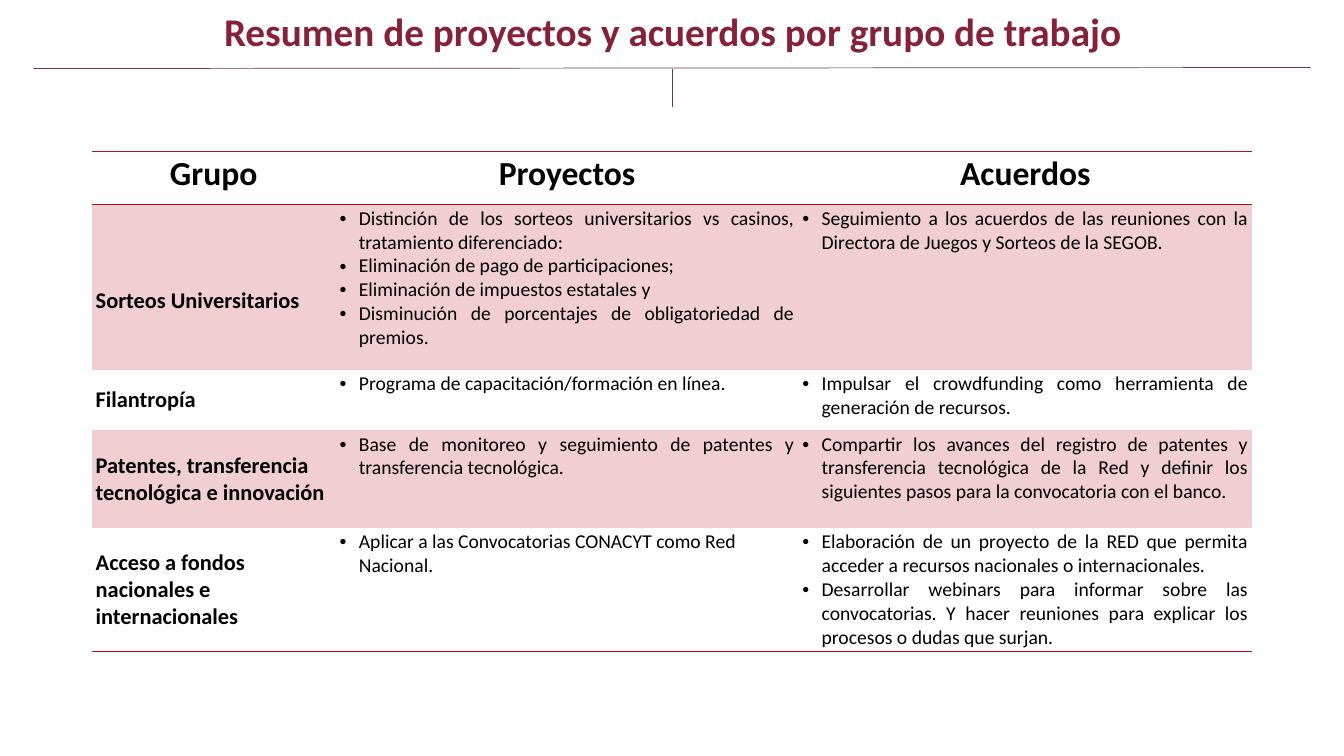
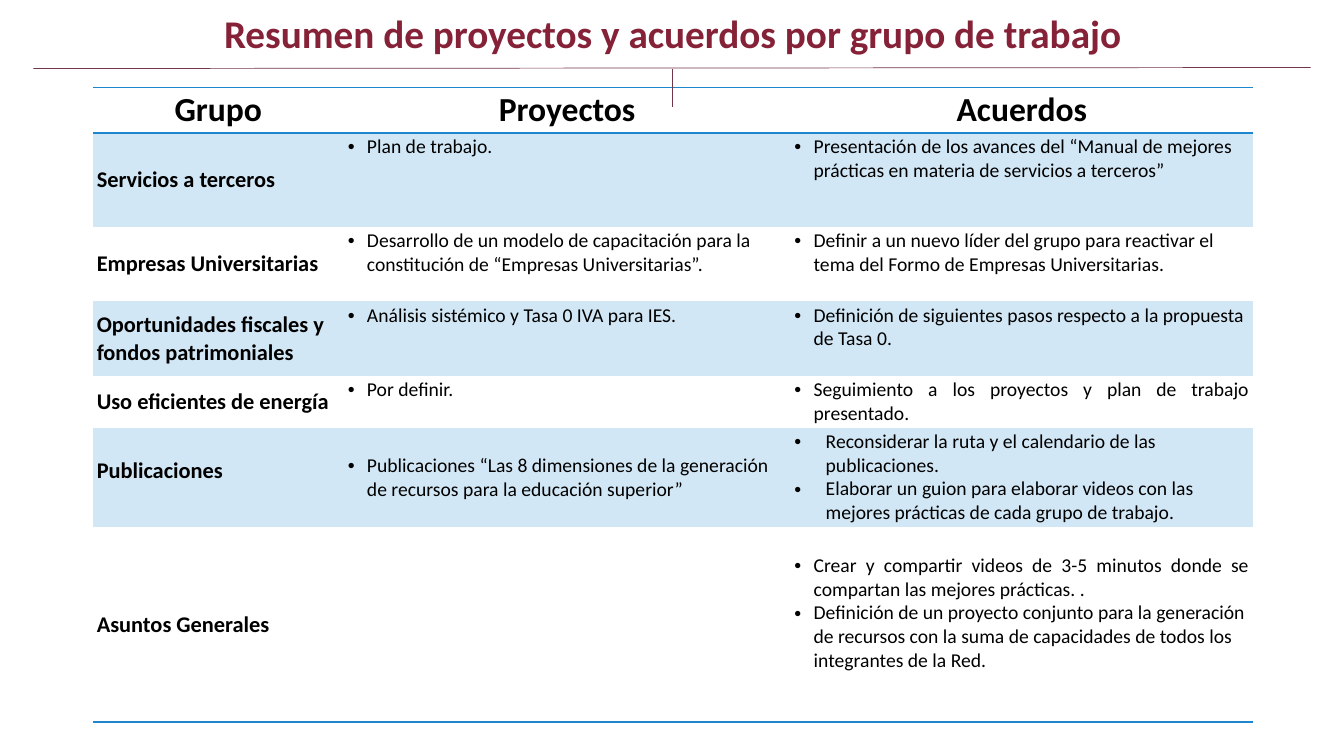
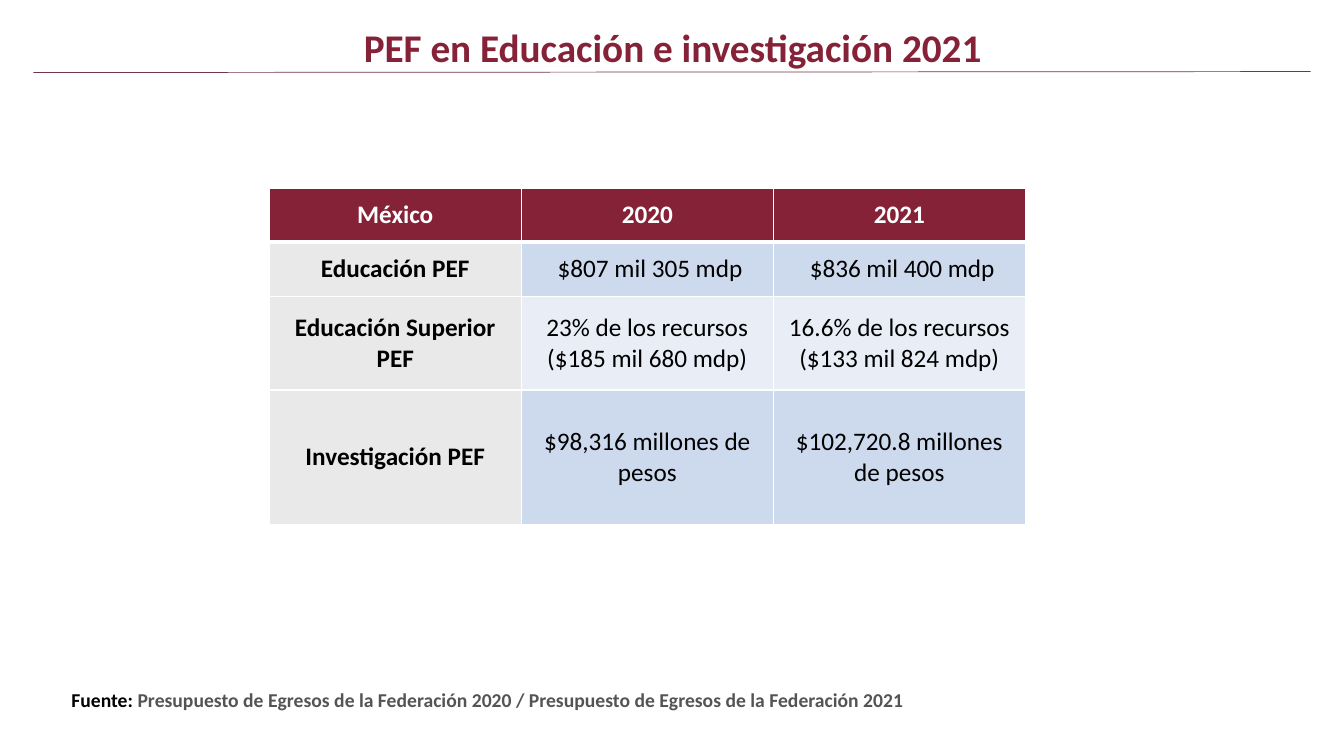
"""Build three slides that summarise working-group projects and the education budget."""
from lxml import etree
from pptx import Presentation
from pptx.dml.color import RGBColor
from pptx.enum import shapes, text
from pptx.oxml.ns import qn
from pptx.util import Inches, Pt

THEME = dict(
    font="Calibri", wine="852238", rule="713648", black="000000", white="FFFFFF", gray="545454",
    red="B50B1B", pink="F0CED1", blue="1D86CD", sky="D2E7F5",
    label="E9E9E9", band=("CDD9ED", "E8EDF6"),
    title=28, header=24, group=16, detail=14, figure=18,
    plain_table="{2D5ABB26-0587-4C30-8999-92F81FD0307C}",
)
CENTER = text.PP_ALIGN.CENTER
TOP, MIDDLE = text.MSO_ANCHOR.TOP, text.MSO_ANCHOR.MIDDLE
LEFT = (text.PP_ALIGN.LEFT, 0.19)
JUST = (text.PP_ALIGN.JUSTIFY, 0.19)
WIDE = (text.PP_ALIGN.LEFT, 0.31)


def write(paragraph, words, size, color="black", bold=False):
    run = paragraph.add_run()
    run.text = words
    for key, value in dict(name=THEME["font"], size=Pt(THEME[size]), bold=bold).items():
        setattr(run.font, key, value)
    run.font.color.rgb = RGBColor.from_string(THEME[color])


def add_borders(cell, color, widths):
    properties = cell._tc.get_or_add_tcPr()
    for side, width in widths.items():
        line = etree.SubElement(properties, qn(f"a:ln{side}"), w=str(Pt(width)))
        fill = etree.SubElement(line, qn("a:solidFill"))
        etree.SubElement(fill, qn("a:srgbClr"), val=THEME[color])


deck = Presentation()
deck.slide_width, deck.slide_height = Inches(13.33), Inches(7.5)

boards = [
    dict(
        line="red", band="pink", at=(0.91, 1.5), widths=(2.42, 4.59, 4.5), header=0.53,
        rows=[
            (1.64, "Sorteos Universitarios", MIDDLE, (0.27, 0, 0),
             [(JUST, "Distinción de los sorteos universitarios vs casinos, tratamiento diferenciado:"),
              (JUST, "Eliminación de pago de participaciones;"),
              (JUST, "Eliminación de impuestos estatales y"),
              (JUST, "Disminución de porcentajes de obligatoriedad de premios.")],
             [(JUST, "Seguimiento a los acuerdos de las reuniones con la Directora de Juegos y "
                     "Sorteos de la SEGOB.")]),
            (0.6, "Filantropía", MIDDLE, (0, 0, 0),
             [(LEFT, "Programa de capacitación/formación en línea.")],
             [(JUST, "Impulsar el crowdfunding como herramienta de generación de recursos.")]),
            (0.97, "Patentes, transferencia tecnológica e innovación", MIDDLE, (0, 0, 0),
             [(JUST, "Base de monitoreo y seguimiento de patentes y transferencia tecnológica.")],
             [(JUST, "Compartir los avances del registro de patentes y transferencia tecnológica "
                     "de la Red y definir los siguientes pasos para la convocatoria con el banco.")]),
            (1.22, "Acceso a fondos nacionales e internacionales", MIDDLE, (0, 0, 0),
             [(LEFT, "Aplicar a las Convocatorias CONACYT como Red Nacional.")],
             [(JUST, "Elaboración de un proyecto de la RED que permita acceder a recursos "
                     "nacionales o internacionales."),
              (JUST, "Desarrollar webinars para informar sobre las convocatorias. Y hacer "
                     "reuniones para explicar los procesos o dudas que surjan.")]),
        ],
    ),
    dict(
        line="blue", band="sky", at=(0.92, 0.87), widths=(2.49, 4.43, 4.59), header=0.45,
        rows=[
            (0.93, "Servicios a terceros", MIDDLE, (0, 0, 0),
             [(LEFT, "Plan de trabajo.")],
             [(LEFT, "Presentación de los avances del “Manual de mejores prácticas en materia "
                     "de servicios a terceros”")]),
            (0.74, "Empresas Universitarias", MIDDLE, (0, 0, 0),
             [(LEFT, "Desarrollo de un modelo de capacitación para la constitución de "
                     "“Empresas Universitarias”.")],
             [(LEFT, "Definir a un nuevo líder del grupo para reactivar el tema del Formo de "
                     "Empresas Universitarias.")]),
            (0.74, "Oportunidades fiscales y fondos patrimoniales", MIDDLE, (0, 0, 0),
             [(LEFT, "Análisis sistémico y Tasa 0 IVA para IES.")],
             [(LEFT, "Definición de siguientes pasos respecto a la propuesta de Tasa 0.")]),
            (0.51, "Uso eficientes de energía", MIDDLE, (0, 0, 0),
             [(LEFT, "Por definir.")],
             [(JUST, "Seguimiento a los proyectos y plan de trabajo presentado.")]),
            (0.99, "Publicaciones", TOP, (0.27, 0.24, 0),
             [(LEFT, "Publicaciones “Las 8 dimensiones de la generación de recursos para la "
                     "educación superior”")],
             [(WIDE, "Reconsiderar la ruta y el calendario de las publicaciones."),
              (WIDE, "Elaborar un guion para elaborar videos con las mejores prácticas de cada "
                     "grupo de trabajo.")]),
            (1.93, "Asuntos Generales", MIDDLE, (0, 0, 0.24),
             [],
             [(JUST, "Crear y compartir videos de 3-5 minutos donde se compartan las mejores "
                     "prácticas. ."),
              (LEFT, "Definición de un proyecto conjunto para la generación de recursos con la "
                     "suma de capacidades de todos los integrantes de la Red.")]),
        ],
    ),
]

for board in boards:
    slide = deck.slides.add_slide(deck.slide_layouts[6])
    heights = [board["header"]] + [row[0] for row in board["rows"]]
    left, top = board["at"]
    table = slide.shapes.add_table(
        len(heights), 3, Inches(left), Inches(top),
        Inches(sum(board["widths"])), Inches(sum(heights))).table
    table._tbl.tblPr[0].text = THEME["plain_table"]
    table.first_row = table.horz_banding = False
    for column, width in zip(table.columns, board["widths"]):
        column.width = Inches(width)
    for table_row, height in zip(table.rows, heights):
        table_row.height = Inches(height)

    for cell in table.iter_cells():
        cell.margin_left = cell.margin_right = Inches(0.04)
        cell.margin_top = cell.margin_bottom = Inches(0.02)
    for index, heading in enumerate(("Grupo", "Proyectos", "Acuerdos")):
        cell = table.cell(0, index)
        cell.text_frame.paragraphs[0].alignment = CENTER
        write(cell.text_frame.paragraphs[0], heading, "header", bold=True)
        add_borders(cell, board["line"], dict(T=1, B=1))
        cell.fill.background()

    for number, (_, group, anchor, gaps, projects, agreements) in enumerate(board["rows"], 1):
        cells = [table.cell(number, index) for index in range(3)]
        cells[0].vertical_anchor = anchor
        write(cells[0].text_frame.paragraphs[0], group, "group", bold=True)
        for cell, items in zip(cells[1:], (projects, agreements)):
            for position, ((alignment, indent), words) in enumerate(items):
                frame = cell.text_frame
                paragraph = frame.add_paragraph() if position else frame.paragraphs[0]
                paragraph.alignment = alignment
                properties = paragraph._p.get_or_add_pPr()
                properties.set("marL", str(Inches(indent)))
                properties.set("indent", str(-Inches(indent)))
                etree.SubElement(properties, qn("a:buFont"), typeface="Arial")
                etree.SubElement(properties, qn("a:buChar"), char="•")
                write(paragraph, words, "detail")
        for cell, gap in zip(cells, gaps):
            cell.margin_top = Inches(0.02 + gap)
            if number == len(board["rows"]):
                add_borders(cell, board["line"], dict(B=1))
            if number % 2:
                cell.fill.solid()
                cell.fill.fore_color.rgb = RGBColor.from_string(THEME[board["band"]])
            else:
                cell.fill.background()

budget = [
    (0.53, "México", "2020", "2021"),
    (0.54, "Educación PEF", " $807 mil 305 mdp", " $836 mil 400 mdp"),
    (0.93, "Educación Superior PEF", "23% de los recursos\n($185 mil 680 mdp)",
     "16.6% de los recursos\n($133 mil 824 mdp)"),
    (1.33, "Investigación PEF", "$98,316 millones de pesos", "$102,720.8 millones de pesos"),
]
slide = deck.slides.add_slide(deck.slide_layouts[6])
source = slide.shapes.add_textbox(Inches(0.61), Inches(6.78), Inches(11.86), Inches(0.34)).text_frame
source.word_wrap = True
write(source.paragraphs[0], "Fuente: ", "detail", bold=True)
write(source.paragraphs[0],
      "Presupuesto de Egresos de la Federación 2020 / Presupuesto de Egresos de la Federación 2021",
      "detail", "gray", True)

table = slide.shapes.add_table(
    len(budget), 3, Inches(2.67), Inches(1.87), Inches(7.5), Inches(3.33)).table
table._tbl.tblPr[0].text = THEME["plain_table"]
table.first_row = table.horz_banding = False
for number, (height, *entries) in enumerate(budget):
    table.rows[number].height = Inches(height)
    for index, entry in enumerate(entries):
        cell = table.cell(number, index)
        cell.vertical_anchor = MIDDLE
        for position, words in enumerate(entry.split("\n")):
            frame = cell.text_frame
            paragraph = frame.add_paragraph() if position else frame.paragraphs[0]
            paragraph.alignment = CENTER
            write(paragraph, words, "figure", "black" if number else "white",
                  number == 0 or index == 0)
        add_borders(cell, "white", dict(L=1, R=1, T=3 if number == 1 else 1, B=1 if number else 3))
        if number == 0:
            shade = THEME["wine"]
        elif index == 0:
            shade = THEME["label"]
        else:
            shade = THEME["band"][(number - 1) % 2]
        cell.fill.solid()
        cell.fill.fore_color.rgb = RGBColor.from_string(shade)

summary = "Resumen de proyectos y acuerdos por grupo de trabajo"
headings = [
    (summary, 0.08, 0.9, 0.68, True),
    (summary, 0.1, 0.9, 0.68, True),
    ("PEF en Educación e investigación 2021", 0.18, 1.0, 0.72, False),
]
for slide, (title, top, spacing, rule, has_tick) in zip(deck.slides, headings):
    frame = slide.shapes.add_textbox(Inches(0.61), Inches(top), Inches(12.12), Inches(0.52)).text_frame
    frame.word_wrap = True
    frame.paragraphs[0].alignment = CENTER
    frame.paragraphs[0].line_spacing = spacing
    write(frame.paragraphs[0], title, "title", "wine", True)
    strokes = [(0.33, rule, 13, rule - 0.01)]
    if has_tick:
        strokes.append((6.67, rule, 6.67, rule + 0.38))
    for ends in strokes:
        stroke = slide.shapes.add_connector(shapes.MSO_CONNECTOR.STRAIGHT, *map(Inches, ends))
        stroke.line.color.rgb = RGBColor.from_string(THEME["rule"])
        stroke.line.width = Pt(0.5)
        etree.SubElement(stroke._element.spPr, qn("a:effectLst"))

deck.save("out.pptx")
